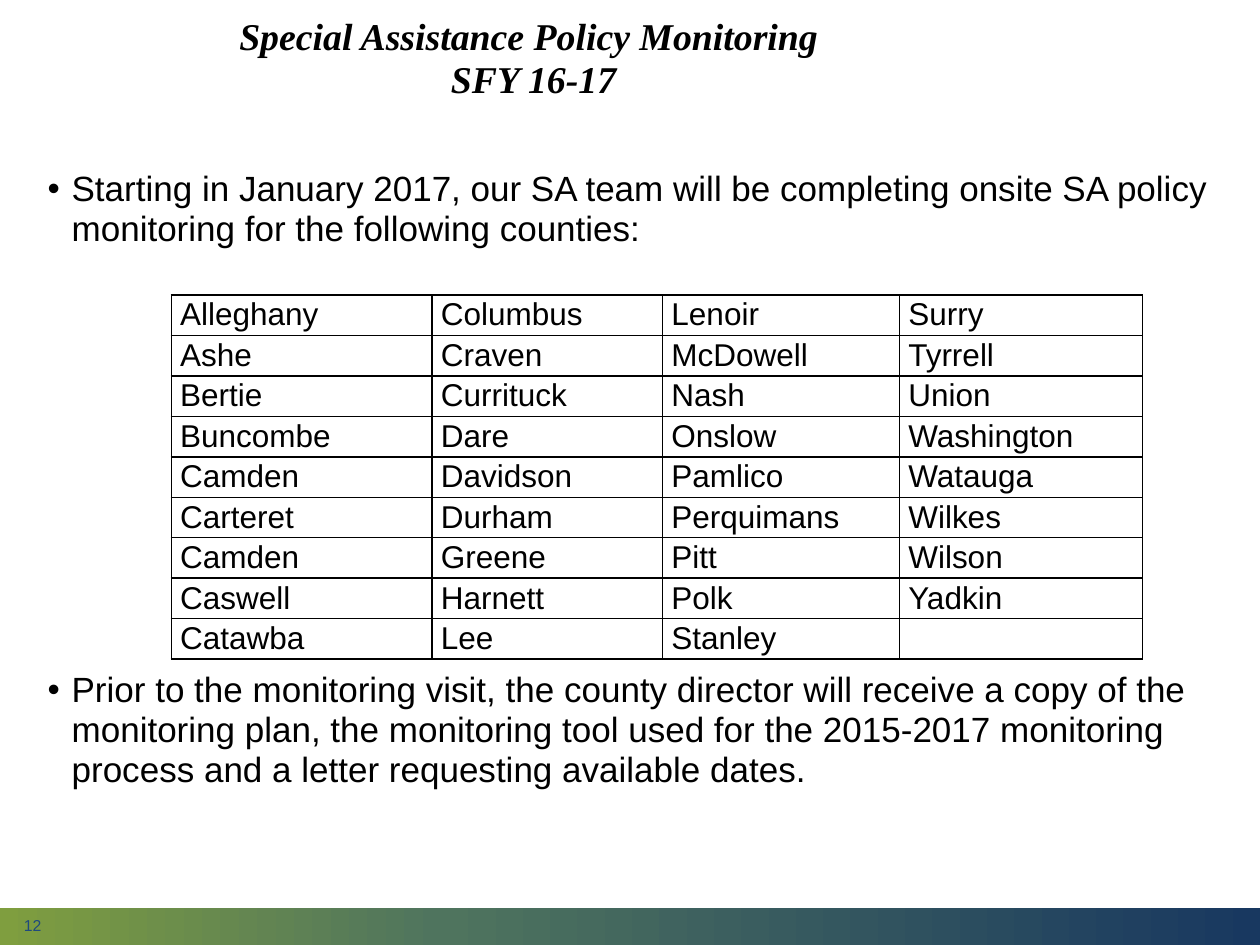
from dataclasses import dataclass

from lxml.etree import SubElement as Sub
from pptx import Presentation
from pptx.dml.color import RGBColor as Rgb
from pptx.enum.shapes import MSO_SHAPE as Shape
from pptx.enum.text import MSO_ANCHOR as Anchor, PP_ALIGN as Align
from pptx.oxml.ns import qn
from pptx.util import Inches, Pt

HUES = {"black": "000000", "navy": "1F497D", "white": "FFFFFF",
        "green": "7F9E3F", "teal": "4F745E", "deep": "183860"}
STOPS = [(0, "green"), (35, "teal"), (100, "deep")]
COLS = [2.07, 1.83, 1.88, 1.93]
ROW = 0.31
NAMES = [
    "Alleghany Ashe Bertie Buncombe Camden Carteret Camden Caswell Catawba",
    "Columbus Craven Currituck Dare Davidson Durham Greene Harnett Lee",
    "Lenoir McDowell Nash Onslow Pamlico Perquimans Pitt Polk Stanley",
    "Surry Tyrrell Union Washington Watauga Wilkes Wilson Yadkin",
]


@dataclass
class Box:
    left: float
    top: float
    width: float
    height: float

    def dims(self) -> list:
        return [Inches(n) for n in (self.left, self.top, self.width, self.height)]


def write(para, text: str, *, size: float = 18, face: str = "Arial",
          hue: str = "black", bold: bool = False, slant: bool = False,
          align=Align.LEFT, lead: float = 1.0, before: float = 0,
          bullet: bool = False) -> None:
    para.text = text
    para.alignment, para.line_spacing = align, lead
    para.space_before = Pt(before)
    if bullet:
        props = para._p.get_or_add_pPr()
        props.set("marL", str(Inches(0.19)))
        props.set("indent", str(-Inches(0.19)))
        Sub(props, qn("a:buFont"), typeface="Arial")
        Sub(props, qn("a:buChar"), char="•")
    for run in para.runs:
        font = run.font
        font.name, font.size = face, Pt(size)
        font.bold, font.italic = bold, slant
        font.color.rgb = Rgb.from_string(HUES[hue])


def frame(slide, box: Box, anchor=Anchor.TOP):
    body = slide.shapes.add_textbox(*box.dims()).text_frame
    body.word_wrap, body.vertical_anchor = True, anchor
    return body


def band(slide, box: Box) -> None:
    bar = slide.shapes.add_shape(Shape.RECTANGLE, *box.dims())
    bar.shadow.inherit = False
    bar.line.fill.background()
    bar.fill.gradient()
    bar.fill.gradient_angle = 0
    stops = bar._element.spPr.find(".//" + qn("a:gsLst"))
    stops.clear()
    for pos, hue in STOPS:
        stop = Sub(stops, qn("a:gs"), pos=str(pos * 1000))
        Sub(stop, qn("a:srgbClr"), val=HUES[hue])


def edge(cell) -> None:
    props = cell._tc.get_or_add_tcPr()
    for side in "LRTB":
        line = Sub(props, qn(f"a:ln{side}"), w=str(Pt(1)))
        fill = Sub(line, qn("a:solidFill"))
        Sub(fill, qn("a:srgbClr"), val=HUES["black"])


def grid(slide, left: float, top: float) -> None:
    lists = [names.split() for names in NAMES]
    rows = max(map(len, lists))
    box = Box(left, top, sum(COLS), ROW * rows)
    table = slide.shapes.add_table(rows, len(COLS), *box.dims()).table
    table.first_row = table.horz_banding = False
    for row in table.rows:
        row.height = Inches(ROW)
    for c, (width, names) in enumerate(zip(COLS, lists)):
        table.columns[c].width = Inches(width)
        for r in range(rows):
            cell = table.cell(r, c)
            cell.margin_left = cell.margin_right = Inches(0.07)
            cell.margin_top = cell.margin_bottom = 0
            edge(cell)
            cell.fill.background()
            name = names[r] if r < len(names) else ""
            write(cell.text_frame.paragraphs[0], name, lead=1.07)


def main() -> None:
    deck = Presentation()
    deck.slide_width, deck.slide_height = Inches(10), Inches(7.5)
    slide = deck.slides.add_slide(deck.slide_layouts[6])
    back = slide.background.fill
    back.solid()
    back.fore_color.rgb = Rgb.from_string(HUES["white"])

    # Footer band and page number
    band(slide, Box(0, 7.21, 10, 0.29))
    page = frame(slide, Box(0.09, 7.27, 2.25, 0.15), Anchor.MIDDLE)
    page.margin_top = page.margin_bottom = 0
    write(page.paragraphs[0], "12", size=9, hue="navy")

    # Title
    title = frame(slide, Box(1.36, 0.06, 5.75, 0.81), Anchor.MIDDLE)
    write(title.paragraphs[0],
          "Special Assistance Policy Monitoring \nSFY 16-17",
          size=21.6, face="Times New Roman", bold=True, slant=True,
          align=Align.CENTER, lead=0.95)

    # Bullets, spaced to leave room for the table
    body = frame(slide, Box(0.28, 1.3, 9.45, 5.74))
    write(body.paragraphs[0],
          "Starting in January 2017, our SA team will be completing onsite "
          "SA policy monitoring for the following counties:",
          size=20, lead=0.95, bullet=True)
    write(body.add_paragraph(),
          "Prior to the monitoring visit, the county director will receive "
          "a copy of the monitoring plan, the monitoring tool used for the "
          "2015-2017 monitoring process and a letter requesting available "
          "dates.",
          size=20, lead=0.95, before=240.5, bullet=True)

    # Counties
    grid(slide, 1.36, 2.34)
    deck.save("out.pptx")


if __name__ == "__main__":
    main()
